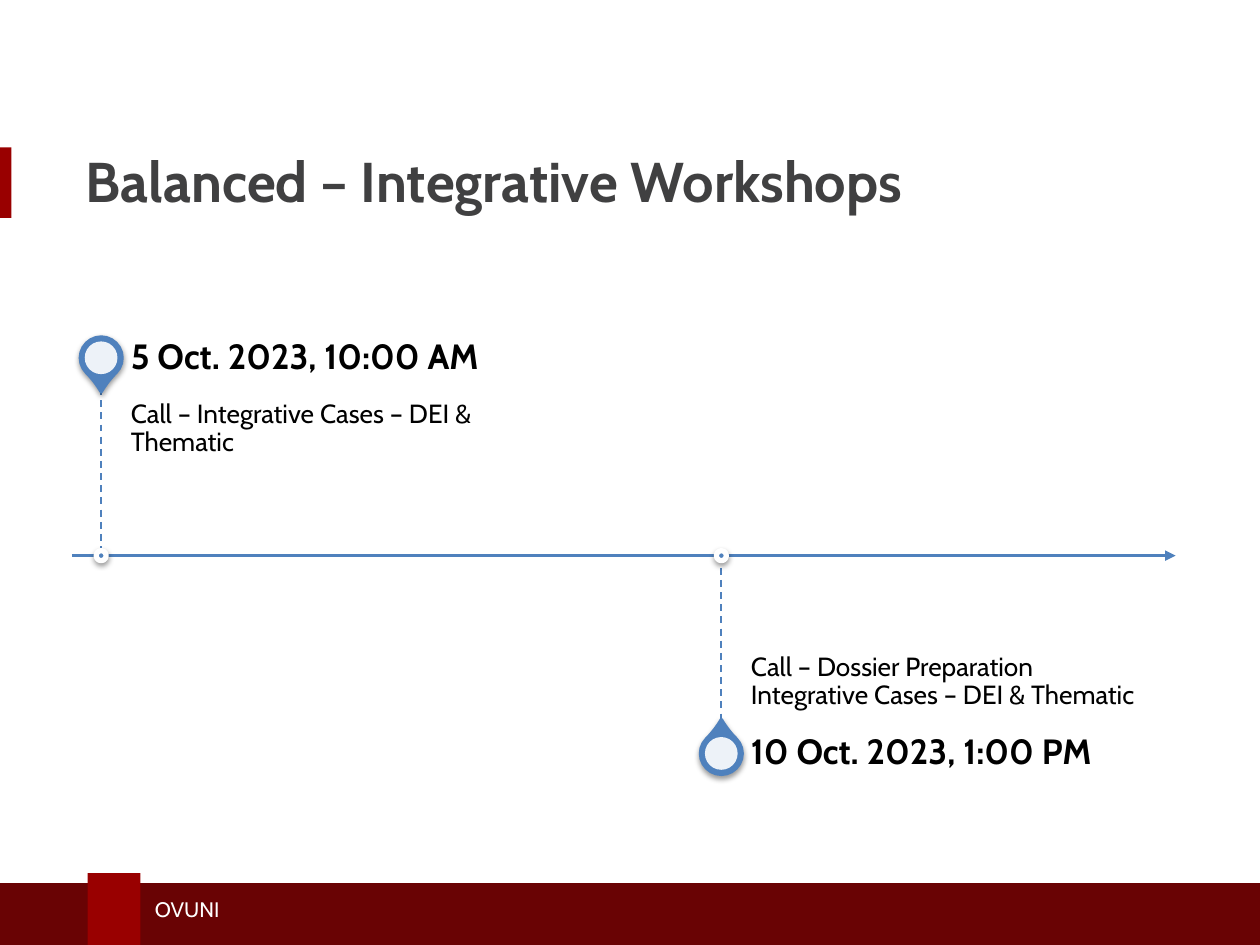
"""Build the workshop timeline slide."""
from lxml.etree import SubElement
from pptx import Presentation
from pptx.dml.color import RGBColor
from pptx.enum.dml import MSO_LINE
from pptx.enum.shapes import MSO_CONNECTOR, MSO_SHAPE
from pptx.enum.text import MSO_ANCHOR, PP_ALIGN
from pptx.oxml.ns import qn
from pptx.util import Inches, Pt

HUES = {name: RGBColor.from_string(code) for name, code in {
    "red": "990000", "dark": "690304", "blue": "4F81BD",
    "white": "FFFFFF", "black": "000000", "grey": "404041"}.items()}

deck = Presentation()
deck.slide_width, deck.slide_height = Inches(10), Inches(7.5)
unit = deck.slide_width / 100
slide = deck.slides.add_slide(deck.slide_layouts[5])
shapes = slide.shapes


def draw(kind, left, top, wide, high, hue, edge=None, weight=0, shade=False):
    item = shapes.add_shape(kind, *[round(n * unit) for n in (left, top, wide, high)])
    item.shadow.inherit = False
    item.fill.solid()
    item.fill.fore_color.rgb = HUES[hue]
    if edge:
        item.line.color.rgb = HUES[edge]
        item.line.width = Pt(weight)
    else:
        item.line.fill.background()
    if shade:
        glow = SubElement(item._element.spPr.find(qn("a:effectLst")), qn("a:outerShdw"),
                          blurRad=str(Pt(3.1)), dist=str(Pt(1.6)), dir="5400000",
                          rotWithShape="0")
        tone = SubElement(glow, qn("a:srgbClr"), val=str(HUES["black"]))
        SubElement(tone, qn("a:alpha"), val="38000")
    return item


def write(box, text, size, hue, bold, anchor, pads):
    frame = box.text_frame
    frame.word_wrap = True
    frame.vertical_anchor = anchor
    (frame.margin_left, frame.margin_top,
     frame.margin_right, frame.margin_bottom) = [Inches(n) for n in pads]
    para = frame.paragraphs[0]
    para.alignment = PP_ALIGN.LEFT
    para.line_spacing = 0.9
    run = para.add_run()
    run.text = text
    run.font.name = "Cabin"
    run.font.size = Pt(size)
    run.font.bold = bold
    run.font.color.rgb = HUES[hue]


for left, top, wide, high, hue in [
        (0, 11.7, 0.9, 5.6, "red"),
        (0, 70.1, 100, 4.9, "dark"),
        (6.95, 69.3, 4.2, 5.7, "red")]:
    draw(MSO_SHAPE.RECTANGLE, left, top, wide, high, hue)

title = shapes.title
title.left, title.top, title.width, title.height = [
    round(n * unit) for n in (5.8, 11.1, 87.5, 7)]
write(title, "Balanced – Integrative Workshops", 32, "grey", True,
      MSO_ANCHOR.MIDDLE, (0.1, 0.05, 0.1, 0.05))

foot = shapes.add_textbox(*[round(n * unit) for n in (11.3, 70.8, 39.5, 3)])
write(foot, "OVUNI", 12, "white", False, MSO_ANCHOR.MIDDLE, (0.1, 0.05, 0.1, 0.05))

axis, reach, drop = 44.1, 13.3, 15.7
events = [
    (8.03, -1, "5 Oct. 2023, 10:00 AM", "Call – Integrative Cases – DEI & Thematic",
     MSO_ANCHOR.TOP, (0, 0.1, 0, 0.16)),
    (57.25, 1, "10 Oct. 2023, 1:00 PM",
     "Call – Dossier Preparation Integrative Cases – DEI & Thematic",
     MSO_ANCHOR.BOTTOM, (0, 0.16, 0.1, 0.1))]

lines = [(5.7, axis, 93.3, axis, 1.5)]
lines += [(col, min(axis, axis + way * reach), col, max(axis, axis + way * reach), 1)
          for col, way, *rest in events]
for *ends, weight in lines:
    line = shapes.add_connector(MSO_CONNECTOR.STRAIGHT, *[round(n * unit) for n in ends])
    line.line.color.rgb = HUES["blue"]
    line.line.width = Pt(weight)
    if weight == 1:
        line.line.dash_style = MSO_LINE.DASH
    else:
        SubElement(line.line._get_or_add_ln(), qn("a:tailEnd"), type="triangle")
    SubElement(line._element.spPr, qn("a:effectLst"))

for col, way, date, topic, anchor, pads in events:
    row = axis + way * drop
    pin = draw(MSO_SHAPE.TEAR, col - 1.65, row - 1.65, 3.3, 3.3, "blue", "blue", 2, True)
    pin.adjustments[0] = 1.15
    pin.rotation = 225 + way * 90
    disc = draw(MSO_SHAPE.OVAL, col - 1.3, row - 1.3, 2.6, 2.6, "white")
    tone = disc._element.spPr.find(qn("a:solidFill"))[0]
    SubElement(tone, qn("a:alpha"), val="90000")
    draw(MSO_SHAPE.OVAL, col - 0.4, axis - 0.4, 0.8, 0.8, "blue", "white", 3, True)

    left = col + 2.35
    note = shapes.add_textbox(*[round(n * unit) for n in (
        left, min(axis, axis + way * reach), 31.9, reach)])
    write(note, topic, 15, "black", False, anchor, pads)
    head = shapes.add_textbox(*[round(n * unit) for n in (left, row - 2.35, 31.9, 4.7)])
    write(head, date, 20, "black", True, MSO_ANCHOR.MIDDLE, (0, 0, 0.14, 0))

deck.save("out.pptx")
